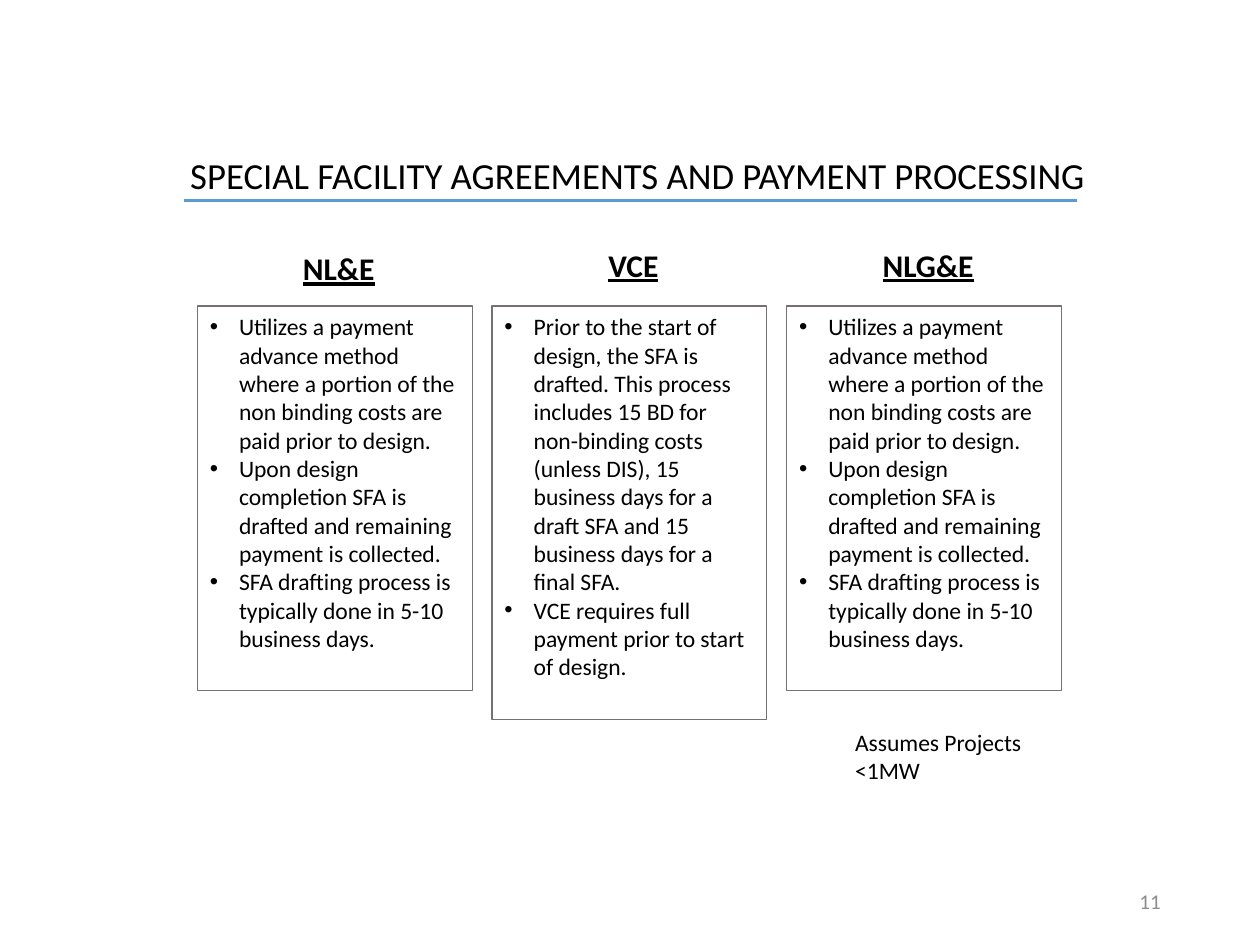
from lxml import etree
from pptx import Presentation
from pptx import util as u
from pptx.dml.color import RGBColor
from pptx.enum import shapes, text
from pptx.oxml import ns

COLORS = {
    "text": "000000",
    "rule": "5B9BD5",
    "panel": "FFFFFF",
    "border": "767171",
    "number": "8C8C8C",
}
FONT = "Calibri"
PANEL_LEFT, PANEL_TOP = 3.98, 6.17
PANEL_WIDTH, PANEL_PITCH = 5.54, 5.94
HEADING_WIDTH, HEADING_SHIFT = 2.4, 0.08
BULLET_INDENT = u.Cm(0.59)

ADVANCE_STEPS = [
    "Utilizes a payment advance method where a portion of the non binding costs are paid prior to design.",
    "Upon design completion SFA is drafted and remaining payment is collected.",
    "SFA drafting process is typically done in 5-10 business days.",
]
FULL_PAYMENT_STEPS = [
    "Prior to the start of design, the SFA is drafted. This process includes 15 BD for non-binding costs "
    "(unless DIS), 15 business days for a draft SFA and 15 business days for a final SFA.",
    "VCE requires full payment prior to start of design.",
]
UTILITIES = [
    ("NL&E", 4.9, 7.75, ADVANCE_STEPS),
    ("VCE", 4.83, 8.33, FULL_PAYMENT_STEPS),
    ("NLG&E", 4.83, 7.75, ADVANCE_STEPS),
]


def color(name):
    return RGBColor.from_string(COLORS[name])


def write(shape, content, size, align=text.PP_ALIGN.LEFT, anchor=text.MSO_ANCHOR.TOP,
          wrap=True, tint="text", heading=False):
    frame = shape.text_frame
    frame.text = content
    frame.word_wrap = wrap
    frame.auto_size = text.MSO_AUTO_SIZE.NONE
    frame.vertical_anchor = anchor
    for paragraph in frame.paragraphs:
        paragraph.alignment = align
        for run in paragraph.runs:
            run.font.name = FONT
            run.font.size = u.Pt(size)
            run.font.color.rgb = color(tint)
            run.font.bold = heading
            run.font.underline = heading


def add_title(slide, content):
    title = slide.shapes.title
    title.left, title.top = u.Cm(3.58), u.Cm(2.95)
    title.width, title.height = u.Cm(18.72), u.Cm(1.14)
    write(title, content, 21, wrap=False)


def add_text(slide, content, left, top, width, height, size, **style):
    box = slide.shapes.add_textbox(u.Cm(left), u.Cm(top), u.Cm(width), u.Cm(height))
    write(box, content, size, **style)


def add_rule(slide):
    rule = slide.shapes.add_connector(
        shapes.MSO_CONNECTOR.STRAIGHT, u.Cm(3.71), u.Cm(4.04), u.Cm(21.72), u.Cm(4.04))
    rule.line.color.rgb = color("rule")
    rule.line.width = u.Pt(1.5)
    etree.SubElement(rule._element.spPr, ns.qn("a:effectLst"))


def add_bullet(paragraph):
    properties = paragraph._p.get_or_add_pPr()
    properties.set("marL", str(BULLET_INDENT))
    properties.set("indent", str(-BULLET_INDENT))
    etree.SubElement(properties, ns.qn("a:buFont"), typeface="Arial")
    etree.SubElement(properties, ns.qn("a:buChar"), char="•")


def add_panel(slide, left, height, steps):
    panel = slide.shapes.add_shape(
        shapes.MSO_SHAPE.RECTANGLE, u.Cm(left), u.Cm(PANEL_TOP), u.Cm(PANEL_WIDTH), u.Cm(height))
    panel.shadow.inherit = False
    panel.fill.solid()
    panel.fill.fore_color.rgb = color("panel")
    panel.line.color.rgb = color("border")
    panel.line.width = u.Pt(0.75)
    write(panel, "\n".join(steps), 13.5)
    for paragraph in panel.text_frame.paragraphs:
        add_bullet(paragraph)


def add_utility(slide, index, name, heading_top, height, steps):
    left = PANEL_LEFT + index * PANEL_PITCH
    heading_left = left + (PANEL_WIDTH - HEADING_WIDTH) / 2 + HEADING_SHIFT
    add_text(slide, name, heading_left, heading_top, HEADING_WIDTH, 1.02, 18,
             align=text.PP_ALIGN.CENTER, heading=True)
    add_panel(slide, left, height, steps)


def main():
    presentation = Presentation()
    presentation.slide_width, presentation.slide_height = u.Cm(25.4), u.Cm(19.05)
    slide = presentation.slides.add_slide(presentation.slide_layouts.get_by_name("Title Only"))
    add_title(slide, "SPECIAL FACILITY AGREEMENTS AND PAYMENT PROCESSING")
    add_rule(slide)
    for index, utility in enumerate(UTILITIES):
        add_utility(slide, index, *utility)
    add_text(slide, "Assumes Projects <1MW", 16.99, 14.55, 5.23, 1.42, 13.5)
    add_text(slide, "11", 17.93, 17.65, 5.72, 1.02, 12, align=text.PP_ALIGN.RIGHT,
             anchor=text.MSO_ANCHOR.MIDDLE, tint="number")
    presentation.save("out.pptx")


if __name__ == "__main__":
    main()
